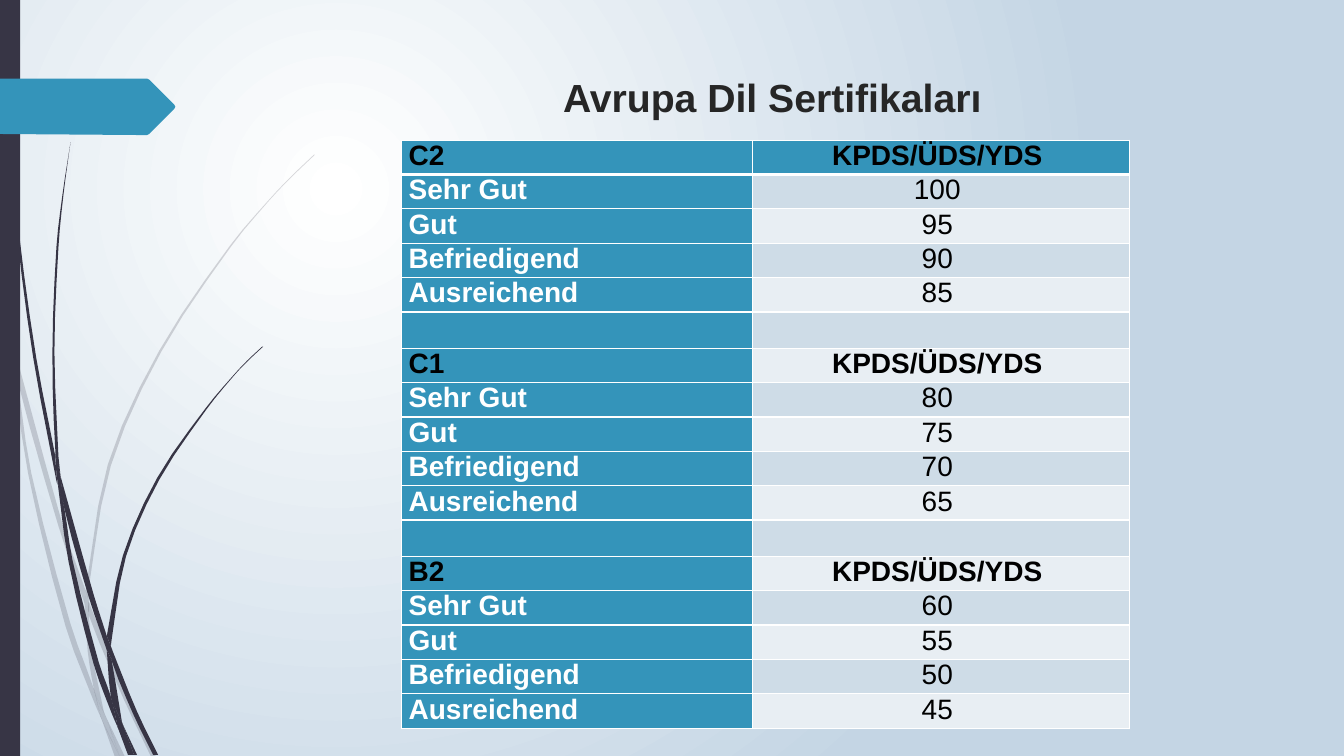
"""Builds a slide with a table matching European language grades to exam scores."""
from lxml import etree
from pptx import Presentation
from pptx import util as u
from pptx.dml.color import RGBColor
from pptx.enum import shapes, text
from pptx.oxml import ns, parse_xml

TITLE = "Avrupa Dil Sertifikaları "
EXAMS = "KPDS/ÜDS/YDS "
GRADES = ["Sehr Gut", "Gut", "Befriedigend", "Ausreichend"]
LEVELS = {"C2": [100, 95, 90, 85], "C1": [80, 75, 70, 65], "B2": [60, 55, 50, 45]}

FONT = "Arial"
COLORS = {
    "dark": "373545", "accent": "3494BA", "title": "262626", "black": "000000",
    "white": "FFFFFF", "band": "CEDCE7", "pale": "E8EEF3", "edge": "C4D5E4",
}

UNIT = 0.72
PALE_GRASS = [
    [[(11, 350), (9, 322), (0, 282)], [(0, 299), (10, 344), (11, 350)]],
    [[(14, 345), (17, 376), (58, 522), (84, 599)], [(85, 586), (62, 520), (14, 345)]],
    [[(88, 596), (88, 610), (123, 694), (150, 751)],
     [(155, 751), (127, 692), (92, 607), (88, 596)]],
    [[(105, 711), (119, 751)], [(124, 751), (105, 711)]],
    [[(11, 350), (28, 470), (65, 621), (92, 693), (101, 714)],
     [(99, 707), (93, 683), (70, 619), (31, 469), (17, 376), (11, 350)]],
    [[(84, 599), (87, 646), (93, 683), (96, 692), (105, 711)],
     [(103, 706), (91, 646), (88, 610), (84, 599)]],
    [[(312, 153), (289, 175), (268, 197), (228, 244), (158, 348), (107, 461), (85, 586)],
     [(88, 596), (88, 584), (110, 462), (160, 349), (229, 245), (268, 198), (290, 175),
      (312, 154)]],
    [[(101, 714), (114, 751)], [(119, 751), (101, 714)]],
    [[(88, 610), (88, 596), (85, 586)], [(84, 599), (88, 608)]],
    [[(93, 683), (99, 707), (101, 714), (119, 751)],
     [(119, 751), (105, 711), (96, 692), (93, 683)]],
]
DARK_GRASS = [
    [[(3, 0), (4, 48), (7, 110), (17, 233), (33, 355), (56, 477), (57, 481)],
     [(55, 457), (55, 453), (36, 355), (19, 232), (8, 109), (5, 48), (4, 0)]],
    [[(60, 472), (64, 505), (88, 592), (106, 645)], [(106, 631), (93, 590), (60, 472)]],
    [[(110, 641), (111, 656), (132, 708), (152, 749)],
     [(157, 749), (136, 706), (113, 649), (110, 641)]],
    [[(57, 477), (68, 557), (93, 659), (111, 708), (117, 722)],
     [(116, 717), (110, 691), (98, 657), (72, 556), (64, 505), (57, 477)]],
    [[(70, 141), (62, 193), (56, 245), (52, 349), (55, 449), (60, 472)],
     [(58, 453), (54, 349), (58, 245), (63, 193), (70, 141)]],
    [[(122, 719), (133, 749)], [(136, 749), (122, 719)]],
    [[(55, 449), (55, 453), (57, 477), (64, 505)], [(60, 472), (55, 449)]],
    [[(260, 344), (245, 358), (231, 373), (204, 405), (156, 474), (122, 551), (106, 631)],
     [(110, 641), (111, 633), (125, 552), (158, 476), (205, 406), (231, 374), (245, 359),
      (261, 344)]],
    [[(117, 722), (127, 749)], [(131, 749), (117, 722)]],
    [[(106, 645), (110, 691), (116, 706), (122, 719)],
     [(121, 716), (111, 656), (109, 651), (106, 645)]],
    [[(106, 645), (109, 651), (111, 656)], [(110, 641), (106, 631)]],
    [[(110, 691), (116, 717), (117, 722), (130, 749)],
     [(133, 749), (122, 719), (116, 706), (110, 691)]],
]
ARROW = [[(173, 108)], [(148, 133)], [(146, 134)], [(136, 134)], [(0, 133)], [(0, 78)],
         [(136, 78)], [(146, 78)], [(148, 79)], [(173, 104)], [(174, 106)]]

SLIDE = (960, 540)
BAR = (0, 0, 14.4, 540)
TITLE_BOX = (204.5, 49, 702, 62)
TABLE_BOX = (286.9, 100.1, 520, 420)
COLUMNS = (250.8, 269.2)
ROW, GAP_ROW = 24.55, 25.9
STEPS = 3


def rgb(name):
    return RGBColor.from_string(COLORS[name])


def points(box):
    return [u.Pt(value) for value in box]


def paint(shape, color):
    shape.shadow.inherit = False
    shape.fill.solid()
    shape.fill.fore_color.rgb = rgb(color)
    shape.line.fill.background()


def smooth(edge):
    knots = [complex(*knot) for knot in edge]
    padded = [knots[0], *knots, knots[-1]]
    curve = []
    for a, b, c, d in zip(padded, padded[1:], padded[2:], padded[3:]):
        length = abs(c - b)
        leave = (c - a) / abs(c - a) * length
        arrive = (d - b) / abs(d - b) * length
        for step in range(STEPS):
            t = step / STEPS
            curve.append(b + (c - b) * t * t * (3 - 2 * t)
                         + leave * t * (1 - t) ** 2 - arrive * t * t * (1 - t))
    return curve + [knots[-1]]


def draw_outline(parent, edges, color, alpha=None):
    outline = [(u.Pt(knot.real * UNIT), u.Pt(knot.imag * UNIT))
               for edge in edges for knot in smooth(edge)]
    builder = parent.shapes.build_freeform(*outline[0])
    builder.add_line_segments(outline[1:], close=True)
    blade = builder.convert_to_shape()
    paint(blade, color)
    if alpha:
        tint = blade.element.spPr.find(".//" + ns.qn("a:srgbClr"))
        etree.SubElement(tint, ns.qn("a:alpha"), val=str(alpha * 1000))


def draw_background(slide):
    slide.element.cSld.insert(0, parse_xml(
        f'<p:bg {ns.nsdecls("p", "a")}><p:bgPr><a:gradFill rotWithShape="1"><a:gsLst>'
        f'<a:gs pos="0"><a:srgbClr val="{COLORS["white"]}"/></a:gs>'
        f'<a:gs pos="100000"><a:srgbClr val="{COLORS["edge"]}"/></a:gs></a:gsLst>'
        '<a:path path="circle"><a:fillToRect l="50000" t="50000" r="100000" b="100000"/></a:path>'
        '</a:gradFill><a:effectLst/></p:bgPr></p:bg>'))


def style_run(run, size, color, bold):
    run.font.name, run.font.size, run.font.bold = FONT, u.Pt(size), bold
    run.font.color.rgb = rgb(color)


def set_borders(cell, top, bottom):
    sides = {"L": 1, "R": 1, "T": top, "B": bottom}
    for index, (side, width) in enumerate(sides.items()):
        cell._tc.get_or_add_tcPr().insert(index, parse_xml(
            f'<a:ln{side} {ns.nsdecls("a")} w="{u.Pt(width)}"><a:solidFill>'
            f'<a:srgbClr val="{COLORS["white"]}"/></a:solidFill></a:ln{side}>'))


def fill_cell(cell, words, fill, color, bold, align):
    cell.fill.solid()
    cell.fill.fore_color.rgb = rgb(fill)
    cell.margin_left = cell.margin_right = u.Pt(5)
    cell.margin_top = cell.margin_bottom = 0
    if words:
        cell.text_frame.text = words
        paragraph = cell.text_frame.paragraphs[0]
        paragraph.alignment = align
        style_run(paragraph.runs[0], 20, color, bold)


def draw_table(slide):
    rows = []
    for level, scores in LEVELS.items():
        if rows:
            rows.append(("", ""))
        rows.append((level, EXAMS))
        rows += [(grade, f"{score} ") for grade, score in zip(GRADES, scores)]
    table = slide.shapes.add_table(len(rows), len(COLUMNS), *points(TABLE_BOX)).table
    for column, width in zip(table.columns, COLUMNS):
        column.width = u.Pt(width)
    for index, (label, score) in enumerate(rows):
        table.rows[index].height = u.Pt(ROW if label else GAP_ROW)
        heading = label in LEVELS
        band = "accent" if index == 0 else "band" if index % 2 else "pale"
        label_cell, score_cell = table.cell(index, 0), table.cell(index, 1)
        fill_cell(label_cell, label, "accent", "black" if heading else "white", True,
                  text.PP_ALIGN.LEFT)
        fill_cell(score_cell, score, band, "black", heading, text.PP_ALIGN.CENTER)
        for cell in (label_cell, score_cell):
            set_borders(cell, 3 if index == 1 else 1, 3 if index == 0 else 1)


def draw_title(slide):
    title = slide.shapes.title
    title.left, title.top, title.width, title.height = points(TITLE_BOX)
    title.text_frame.text = TITLE
    title.text_frame.vertical_anchor = text.MSO_ANCHOR.TOP
    title.text_frame.margin_top = u.Pt(3.6)
    title.text_frame.paragraphs[0].alignment = text.PP_ALIGN.CENTER
    style_run(title.text_frame.paragraphs[0].runs[0], 28, "title", True)


def main():
    deck = Presentation()
    deck.slide_width, deck.slide_height = points(SLIDE)
    slide = deck.slides.add_slide(deck.slide_layouts[5])
    draw_background(slide)
    for grass, alpha in ((PALE_GRASS, 20), (DARK_GRASS, None)):
        tuft = slide.shapes.add_group_shape()
        for edges in grass:
            draw_outline(tuft, edges, "dark", alpha)
    bar = slide.shapes.add_shape(shapes.MSO_SHAPE.RECTANGLE, *points(BAR))
    paint(bar, "dark")
    draw_outline(slide, ARROW, "accent")
    draw_title(slide)
    draw_table(slide)
    deck.save("out.pptx")


if __name__ == "__main__":
    main()
